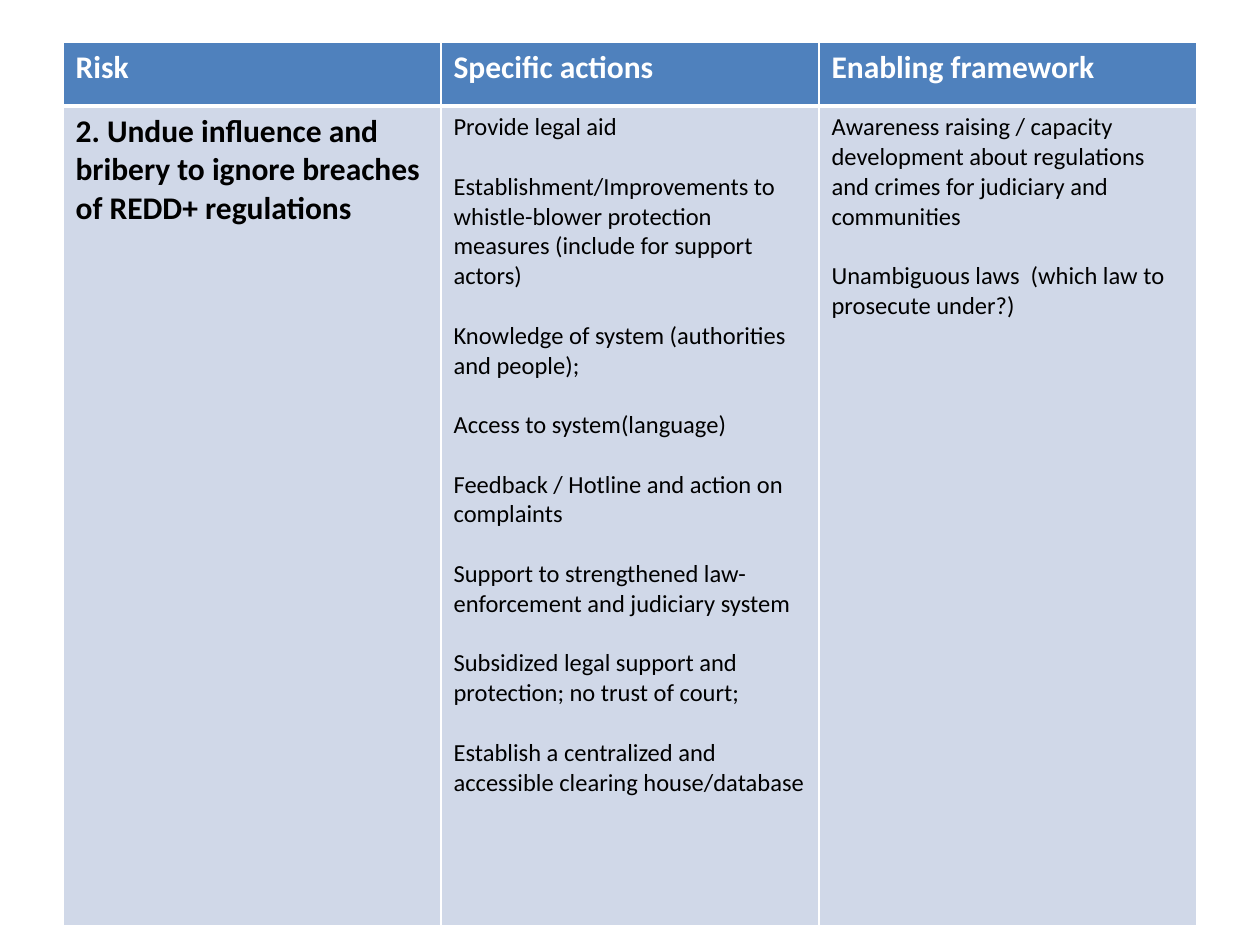
from lxml.etree import SubElement
from pptx import Presentation
from pptx.dml.color import RGBColor
from pptx.oxml.ns import qn
from pptx.util import Emu, Pt

HEADINGS = ["Risk", "Specific actions", "Enabling framework"]
RISK = ["2. Undue influence and bribery to ignore breaches of REDD+ regulations"]
ACTIONS = [
    "Provide legal aid",
    "Establishment/Improvements to whistle-blower protection measures (include for support actors)",
    "Knowledge of system (authorities and people);",
    "Access to system(language)",
    "Feedback / Hotline and action on complaints",
    "Support to strengthened law-enforcement and judiciary system",
    "Subsidized legal support and protection; no trust of court;",
    "Establish a centralized and accessible clearing house/database",
]
FRAMEWORK = [
    "Awareness raising / capacity development about regulations and crimes for judiciary and communities",
    "Unambiguous laws  (which law to prosecute under?)",
]
ROWS = [[[heading] for heading in HEADINGS], [RISK, ACTIONS, FRAMEWORK]]

LEFT, TOP, COLUMN_WIDTH = 63, 42, 378
ROW_HEIGHTS = [64, 820]
HEADER_FILL, BODY_FILL = "4F81BD", "D0D8E8"
WHITE, BLACK = "FFFFFF", "000000"
THIN, THICK = 1, 3
LINE_GAP = 17


def px(length):
    return Emu(round(length * 914400 / 126))


def color(value):
    return RGBColor.from_string(value)


def set_borders(cell, top, bottom):
    properties = cell._tc.get_or_add_tcPr()
    for side, width in zip("LRTB", (THIN, THIN, top, bottom)):
        line = SubElement(properties, qn(f"a:ln{side}"), w=str(Pt(width)))
        fill = SubElement(line, qn("a:solidFill"))
        SubElement(fill, qn("a:srgbClr"), val=WHITE)


def fill_cell(cell, entries, is_header, is_risk):
    top, bottom = (THIN, THICK) if is_header else (THICK, THIN)
    set_borders(cell, top, bottom)
    cell.fill.solid()
    cell.fill.fore_color.rgb = color(HEADER_FILL if is_header else BODY_FILL)
    cell.text = "\n".join(entries)
    emphasised = is_header or is_risk
    for index, paragraph in enumerate(cell.text_frame.paragraphs):
        paragraph.space_before = Pt(LINE_GAP if index else 0)
        paragraph.font.name = "Calibri"
        paragraph.font.size = Pt(18 if emphasised else 14)
        paragraph.font.bold = emphasised
        paragraph.font.color.rgb = color(WHITE if is_header else BLACK)


def main():
    deck = Presentation()
    deck.slide_width, deck.slide_height = px(1260), px(945)
    slide = deck.slides.add_slide(deck.slide_layouts[6])
    columns = len(HEADINGS)
    risk_table = slide.shapes.add_table(
        len(ROWS), columns, px(LEFT), px(TOP),
        px(COLUMN_WIDTH * columns), px(sum(ROW_HEIGHTS)),
    ).table
    for column in risk_table.columns:
        column.width = px(COLUMN_WIDTH)
    for row_index, row in enumerate(ROWS):
        risk_table.rows[row_index].height = px(ROW_HEIGHTS[row_index])
        for column_index, entries in enumerate(row):
            cell = risk_table.cell(row_index, column_index)
            fill_cell(cell, entries, row_index == 0, column_index == 0)
    deck.save("out.pptx")


if __name__ == "__main__":
    main()
